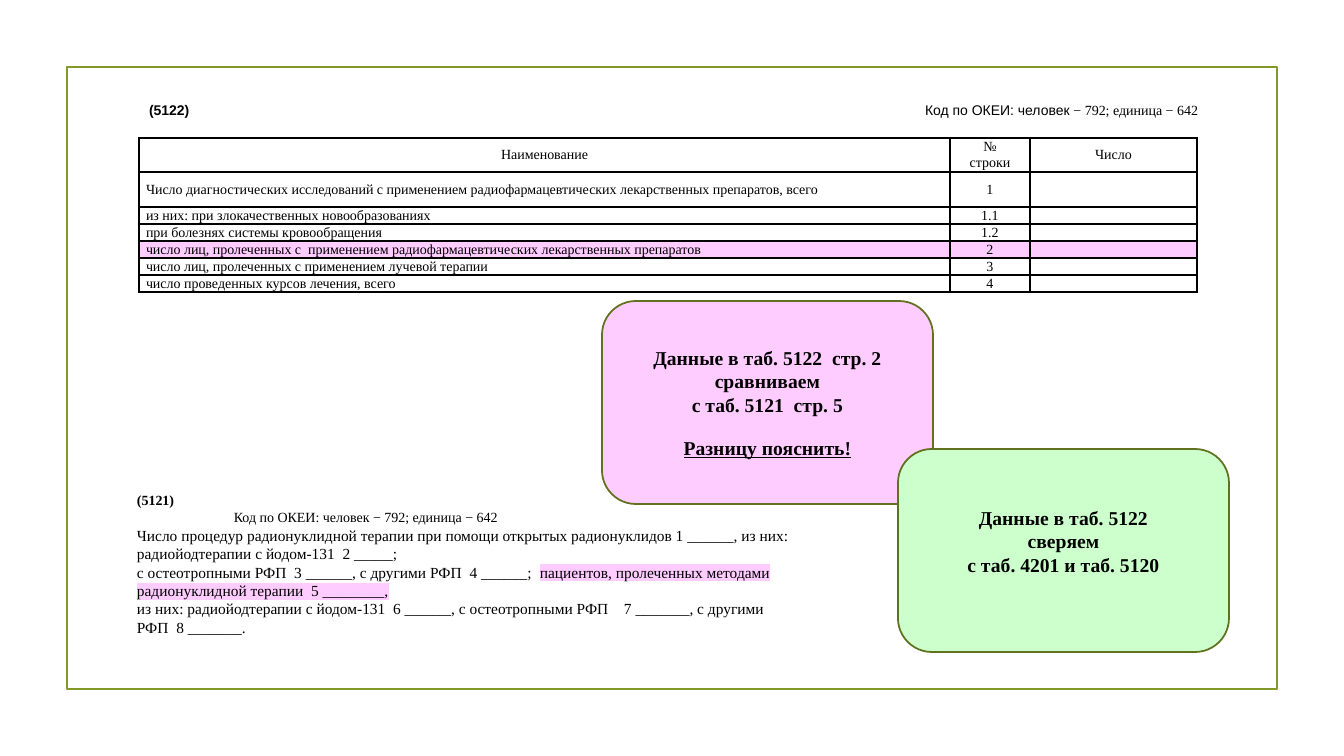
import pptx
import pptx.util
import pptx.dml.color
import pptx.enum.shapes
import pptx.enum.text
import pptx.oxml
import pptx.oxml.ns
import lxml.etree

SCALE = 914400 / 100.8
SERIF = "Times New Roman"
PINK = "FFCCFF"
ALIGN = pptx.enum.text.PP_ALIGN
MIDDLE = pptx.enum.text.MSO_ANCHOR.MIDDLE
SHAPES = pptx.enum.shapes.MSO_SHAPE
qn = pptx.oxml.ns.qn


def px(*lengths):
    values = [pptx.util.Emu(round(length * SCALE)) for length in lengths]
    return values[0] if len(values) == 1 else values


def paint(color_format, color):
    color_format.rgb = pptx.dml.color.RGBColor.from_string(color)


presentation = pptx.Presentation()
presentation.slide_width, presentation.slide_height = px(1344, 756)
slide = presentation.slides.add_slide(presentation.slide_layouts[5])

frame = slide.shapes.add_shape(SHAPES.RECTANGLE, *px(67, 67, 1210, 622))
frame.shadow.inherit = False
frame.fill.background()
paint(frame.line.color, "83992A")
frame.line.width = pptx.util.Pt(1.25)

title = slide.shapes.title
title.left, title.top, title.width, title.height = px(139, 96, 1090, 27)
title.text_frame.auto_size = pptx.enum.text.MSO_AUTO_SIZE.NONE
title.text_frame.vertical_anchor = MIDDLE
title.text_frame.margin_left = px(10)
paragraph = title.text_frame.paragraphs[0]
paragraph.alignment = ALIGN.LEFT
title_runs = [
    ("(5122)", "Arial", True),
    ("\tКод по ОКЕИ: человек ", "Arial", False),
    ("− 792; единица − 642", SERIF, False),
]
for text, font_name, bold in title_runs:
    run = paragraph.add_run()
    run.text = text
    run.font.name = font_name
    run.font.bold = bold
    run.font.size = pptx.util.Pt(10)
    paint(run.font.color, "000000")
tabs = lxml.etree.SubElement(paragraph._p.get_or_add_pPr(), qn("a:tabLst"))
lxml.etree.SubElement(tabs, qn("a:tab"), pos=str(px(1049)), algn="r")

rows = [
    ("Наименование", "№\vстроки", "Число"),
    ("Число диагностических исследований с применением радиофармацевтических лекарственных препаратов, всего", "1", ""),
    ("из них: при злокачественных новообразованиях", "1.1", ""),
    ("при болезнях системы кровообращения", "1.2", ""),
    ("число лиц, пролеченных с  применением радиофармацевтических лекарственных препаратов", "2", ""),
    ("число лиц, пролеченных с применением лучевой терапии", "3", ""),
    ("число проведенных курсов лечения, всего", "4", ""),
]
table = slide.shapes.add_table(7, 3, *px(139, 138, 1058, 154)).table
table.first_row = False
table.horz_banding = False
for column, width in zip(table.columns, (811, 80, 167)):
    column.width = px(width)
for row, height in zip(table.rows, (34, 35, 17, 17, 17, 17, 17)):
    row.height = px(height)

for row_index, texts in enumerate(rows):
    for column_index, text in enumerate(texts):
        cell = table.cell(row_index, column_index)
        cell.margin_left = cell.margin_right = px(7)
        cell.margin_top = cell.margin_bottom = 0
        cell.vertical_anchor = MIDDLE
        cell.text_frame.text = text
        paragraph = cell.text_frame.paragraphs[0]
        centred = row_index == 0 or column_index > 0
        paragraph.alignment = ALIGN.CENTER if centred else ALIGN.LEFT
        for run in paragraph.runs:
            run.font.name = SERIF
            run.font.size = pptx.util.Pt(10)
            paint(run.font.color, "000000")
        if not text:
            paragraph._p.get_or_add_endParaRPr().set("sz", "1000")
        properties = cell._tc.get_or_add_tcPr()
        for side in ("a:lnL", "a:lnR", "a:lnT", "a:lnB"):
            border = lxml.etree.SubElement(properties, qn(side), w="12700")
            solid = lxml.etree.SubElement(border, qn("a:solidFill"))
            lxml.etree.SubElement(solid, qn("a:srgbClr"), val="000000")
        if row_index == 4:
            cell.fill.solid()
            paint(cell.fill.fore_color, PINK)
        else:
            cell.fill.background()

callouts = [
    (602, 301, PINK, 5,
     ["Данные в таб. 5122  стр. 2", "сравниваем", "с таб. 5121  стр. 5", "Разницу пояснить!"]),
    (898, 449, "CCFFCC", 24,
     ["Данные в таб. 5122", "сверяем", "с таб. 4201 и таб. 5120"]),
]
for left, top, color, bottom_margin, lines in callouts:
    callout = slide.shapes.add_shape(SHAPES.ROUNDED_RECTANGLE, *px(left, top, 331, 203))
    callout.shadow.inherit = False
    callout.fill.solid()
    paint(callout.fill.fore_color, color)
    paint(callout.line.color, "61711F")
    callout.line.width = pptx.util.Pt(1.25)
    callout.text_frame.word_wrap = True
    callout.text_frame.vertical_anchor = MIDDLE
    callout.text_frame.margin_bottom = px(bottom_margin)
    callout.text_frame.text = "\n".join(lines)
    for paragraph in callout.text_frame.paragraphs:
        paragraph.alignment = ALIGN.CENTER
        run = paragraph.runs[0]
        run.font.name = SERIF
        run.font.size = pptx.util.Pt(14)
        run.font.bold = True
        paint(run.font.color, "000000")
        if run.text == "Разницу пояснить!":
            run.font.underline = True
            paragraph.space_before = pptx.util.Pt(14)

note = slide.shapes.add_textbox(*px(127, 487, 672, 156))
note.text_frame.word_wrap = True
note_paragraphs = [
    (10, ["(5121)"]),
    (10, ["Код по ОКЕИ: человек − 792; единица − 642"]),
    (11, ["Число процедур радионуклидной терапии при помощи открытых радионуклидов 1 ______, из них: радиойодтерапии с йодом-131  2 _____;"]),
    (11, ["с остеотропными РФП  3 ______, с другими РФП  4 ______;  ",
          "пациентов, пролеченных методами радионуклидной терапии  5 ________,"]),
    (11, ["из них: радиойодтерапии с йодом-131  6 ______, с остеотропными РФП\t7 _______, с другими РФП  8 _______."]),
]
for index, (size, texts) in enumerate(note_paragraphs):
    paragraph = note.text_frame.paragraphs[0] if index == 0 else note.text_frame.add_paragraph()
    for run_index, text in enumerate(texts):
        run = paragraph.add_run()
        run.text = text
        run.font.name = SERIF
        run.font.size = pptx.util.Pt(size)
        run.font.bold = index == 0
        paint(run.font.color, "000000")
        if run_index == 1:
            highlight = pptx.oxml.parse_xml(
                f'<a:highlight {pptx.oxml.ns.nsdecls("a")}><a:srgbClr val="{PINK}"/></a:highlight>')
            run._r.rPr.find(qn("a:solidFill")).addnext(highlight)
note.text_frame.paragraphs[1]._p.get_or_add_pPr().set("marL", str(px(97)))
tabs = lxml.etree.SubElement(note.text_frame.paragraphs[4]._p.get_or_add_pPr(), qn("a:tabLst"))
lxml.etree.SubElement(tabs, qn("a:tab"), pos=str(px(487)), algn="l")

presentation.save("out.pptx")
